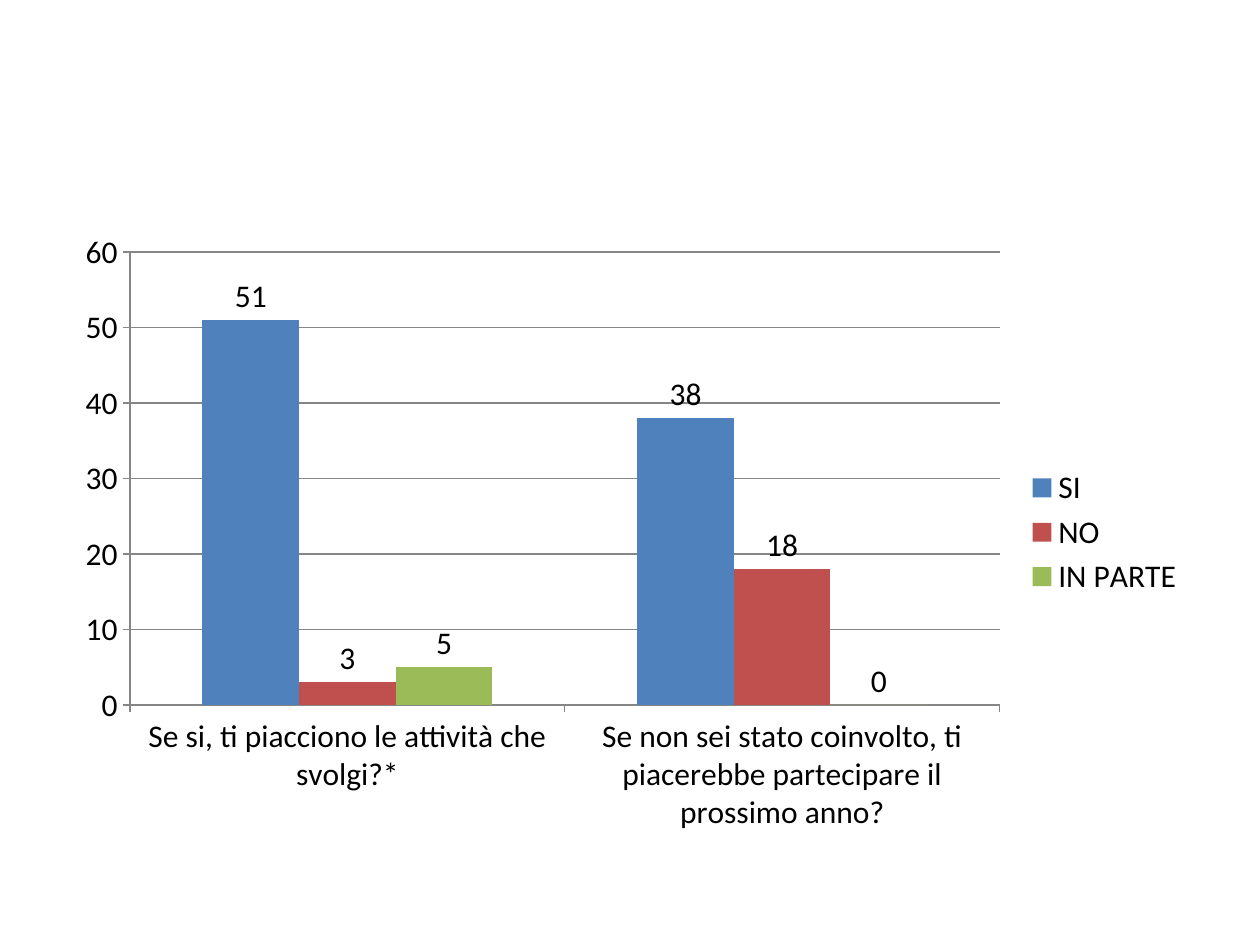
from pptx import Presentation
from pptx.chart.data import CategoryChartData as Data
from pptx.dml.color import RGBColor
from pptx.enum.chart import XL_CHART_TYPE as Kind
from pptx.enum.chart import XL_LABEL_POSITION as Place
from pptx.enum.chart import XL_LEGEND_POSITION as Side
from pptx.enum.chart import XL_TICK_MARK as Tick
from pptx.util import Inches, Pt

BLACK = RGBColor(0x00, 0x00, 0x00)
GREY = RGBColor(0x86, 0x86, 0x86)
BLUE = RGBColor(0x4F, 0x81, 0xBD)
RED = RGBColor(0xC0, 0x50, 0x4D)
GREEN = RGBColor(0x9B, 0xBB, 0x59)


def style(text, size=18, color=BLACK, face="Calibri"):
    text.font.size = Pt(size)
    text.font.name = face
    text.font.color.rgb = color


deck = Presentation()
deck.slide_width, deck.slide_height = Inches(10), Inches(7.5)
slide = deck.slides.add_slide(deck.slide_layouts[6])

rows = [
    ("SI", (51, 38), BLUE),
    ("NO", (3, 18), RED),
    ("IN PARTE", (5, 0), GREEN),
]
data = Data()
data.categories = [
    "Se si, ti piacciono le attività che svolgi?*",
    "Se non sei stato coinvolto, ti piacerebbe partecipare il prossimo anno?",
]
for name, vals, _ in rows:
    data.add_series(name, vals)

chart = slide.shapes.add_chart(
    Kind.COLUMN_CLUSTERED,
    Inches(0.5), Inches(1.75), Inches(9), Inches(4.95), data,
).chart
style(chart)
chart.has_title = False
chart.has_legend = True
chart.legend.position = Side.RIGHT
chart.legend.include_in_layout = False

plot = chart.plots[0]
plot.gap_width = 150
plot.overlap = 0
plot.vary_by_categories = False
for bars, (_, _, color) in zip(plot.series, rows):
    bars.format.fill.solid()
    bars.format.fill.fore_color.rgb = color
    bars.invert_if_negative = False
    labels = bars.data_labels
    labels.show_value = True
    labels.position = Place.OUTSIDE_END
    style(labels)

value = chart.value_axis
value.minimum_scale, value.maximum_scale = 0, 60
value.major_unit = 10
value.has_major_gridlines = True
for axis in (chart.category_axis, value):
    axis.major_tick_mark = Tick.OUTSIDE
    axis.minor_tick_mark = Tick.NONE
for part in (chart.category_axis, value, value.major_gridlines):
    part.format.line.color.rgb = GREY
    part.format.line.width = Pt(0.75)

deck.save("out.pptx")
